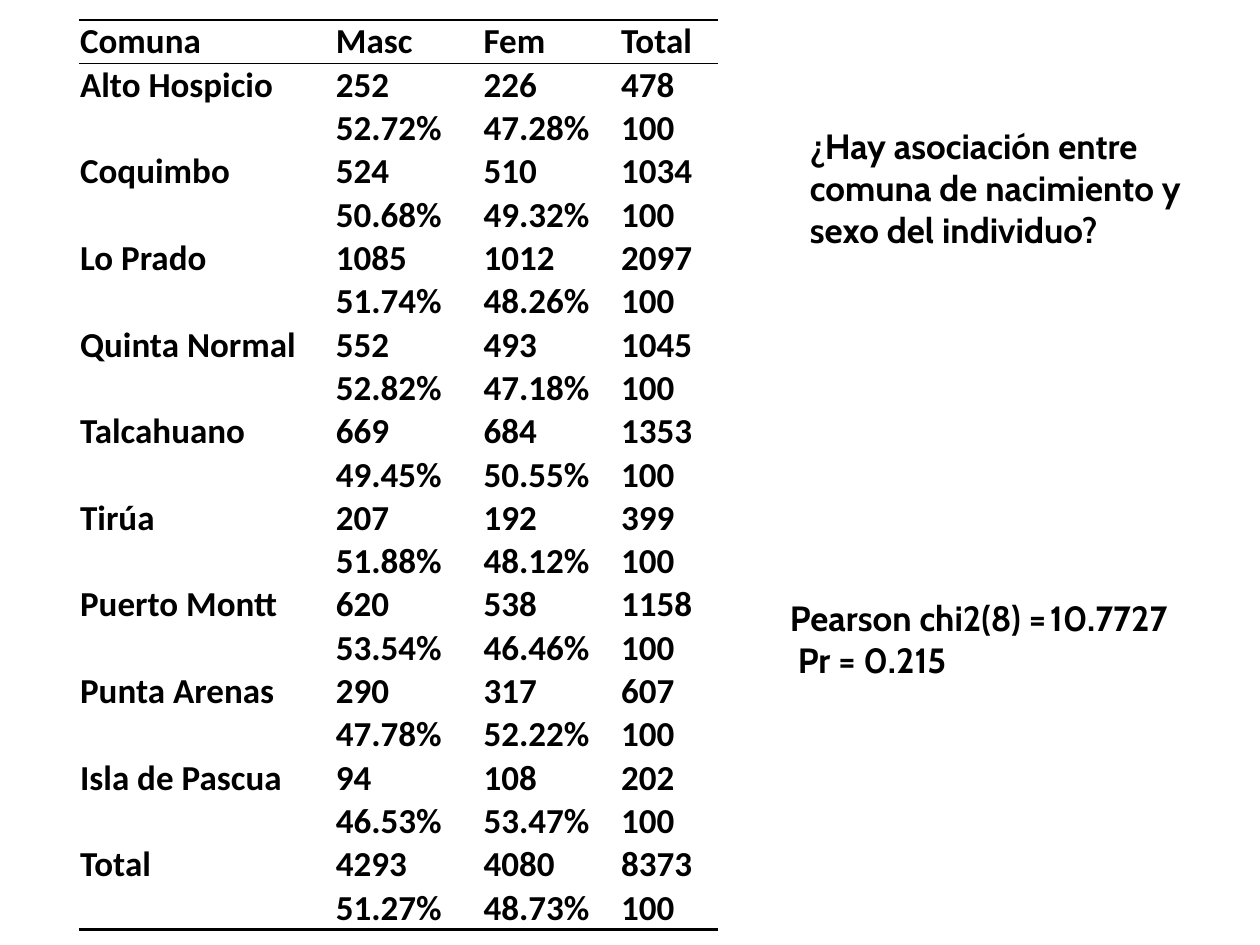
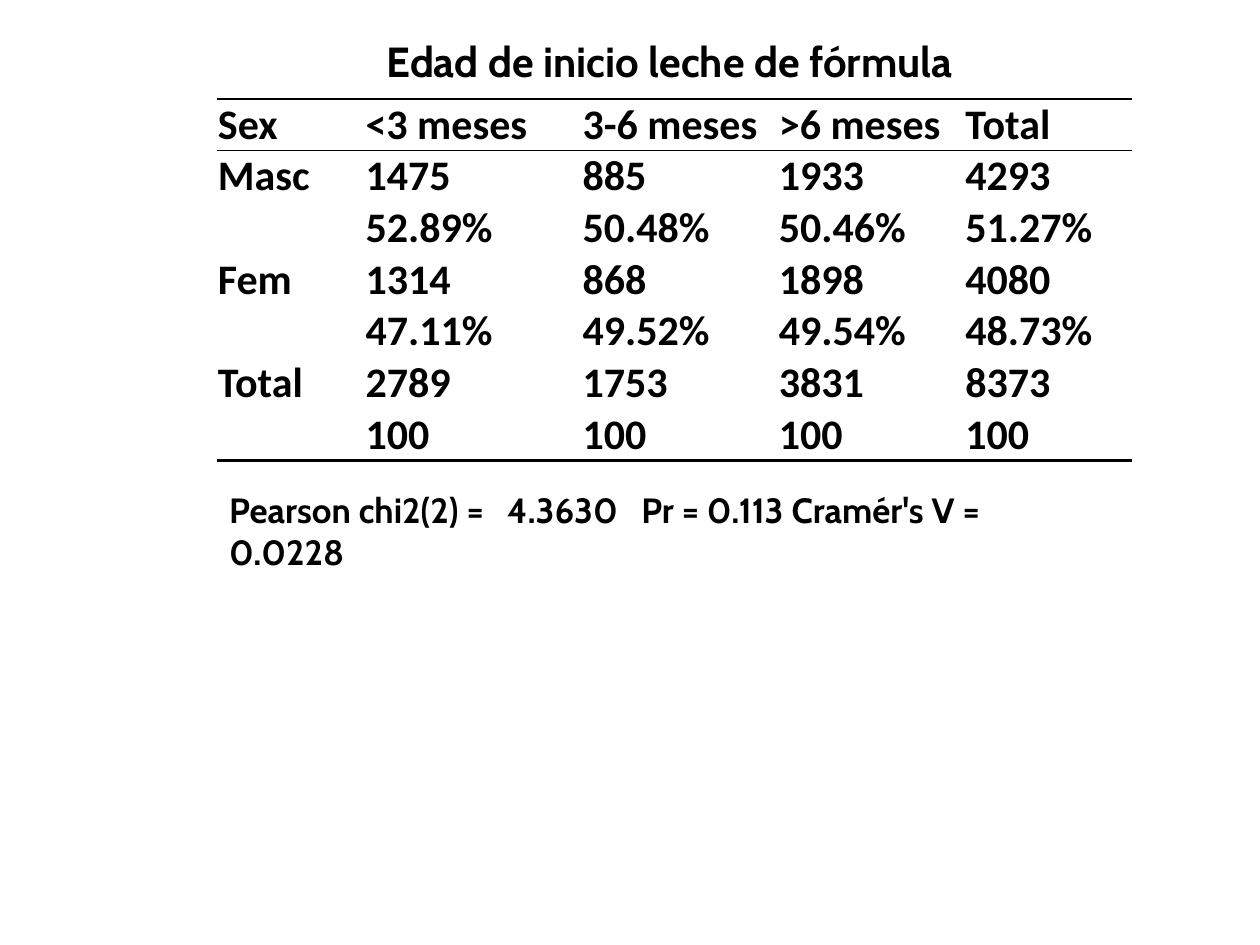
from dataclasses import dataclass

from lxml.etree import SubElement
from pptx import Presentation
from pptx.dml.color import RGBColor
from pptx.enum.text import MSO_ANCHOR, MSO_AUTO_SIZE, PP_ALIGN
from pptx.oxml import parse_xml
from pptx.oxml.ns import nsdecls, qn
from pptx.util import Pt

INK = "000000"
TABLE_FONT = "Calibri"
NOTE_FONT = "Cabin"
THICK_RULE = 1.5
THIN_RULE = 0.5
SIDE_INSET = 0.7
TOP_INSET = 0.25
NO_STYLE_NO_GRID = "{2D5ABB26-0587-4C30-8999-92F81FD0307C}"


@dataclass(frozen=True)
class Category:
    """One category of a cross table: a line of counts above a line of percentages."""
    name: str
    counts: tuple[str, ...]
    percentages: tuple[str, ...]


@dataclass(frozen=True)
class CrossTable:
    left: float
    top: float
    column_widths: tuple[float, ...]
    row_height: float
    font_size: float
    header: tuple[str, ...]
    categories: tuple[Category, ...]

    def rows(self) -> list[tuple[str, ...]]:
        rows = [self.header]
        for category in self.categories:
            rows += [(category.name, *category.counts), ("", *category.percentages)]
        return rows


@dataclass(frozen=True)
class Note:
    text: str
    left: float
    top: float
    width: float
    height: float
    size: float = 20
    align: PP_ALIGN = PP_ALIGN.LEFT
    hanging: float = 0
    tabs: tuple[float, ...] = ()


SEX_BY_COMUNA = CrossTable(
    left=45.1, top=11.5, column_widths=(146.2, 84.4, 78.6, 56.0), row_height=24.66,
    font_size=20, header=("Comuna", "Masc", "Fem", "Total"),
    categories=(
        Category("Alto Hospicio", ("252", "226", "478"), ("52.72%", "47.28%", "100")),
        Category("Coquimbo", ("524", "510", "1034"), ("50.68%", "49.32%", "100")),
        Category("Lo Prado", ("1085", "1012", "2097"), ("51.74%", "48.26%", "100")),
        Category("Quinta Normal", ("552", "493", "1045"), ("52.82%", "47.18%", "100")),
        Category("Talcahuano", ("669", "684", "1353"), ("49.45%", "50.55%", "100")),
        Category("Tirúa", ("207", "192", "399"), ("51.88%", "48.12%", "100")),
        Category("Puerto Montt", ("620", "538", "1158"), ("53.54%", "46.46%", "100")),
        Category("Punta Arenas", ("290", "317", "607"), ("47.78%", "52.22%", "100")),
        Category("Isla de Pascua", ("94", "108", "202"), ("46.53%", "53.47%", "100")),
        Category("Total", ("4293", "4080", "8373"), ("51.27%", "48.73%", "100")),
    ),
)
COMUNA_NOTES = (
    Note("¿Hay asociación entre comuna de nacimiento y sexo del individuo?",
         455.76, 67.7, 247.7, 80),
    Note("Pearson chi2(8) =\t10.7727 Pr = 0.215", 444.24, 337.5, 242, 55.4,
         hanging=4.6, tabs=(160.5,)),
)

FORMULA_BY_SEX = CrossTable(
    left=123.84, top=56.4, column_widths=(84.4, 124, 112.2, 106.6, 96), row_height=29.55,
    font_size=24, header=("Sex", "<3 meses", "3-6 meses", ">6 meses", "Total"),
    categories=(
        Category("Masc", ("1475", "885", "1933", "4293"),
                 ("52.89%", "50.48%", "50.46%", "51.27%")),
        Category("Fem", ("1314", "868", "1898", "4080"),
                 ("47.11%", "49.52%", "49.54%", "48.73%")),
        Category("Total", ("2789", "1753", "3831", "8373"), ("100",) * 4),
    ),
)
FORMULA_NOTES = (
    Note("Edad de inicio leche de fórmula", 191.5, 16.56, 382.3, 36,
         size=24, align=PP_ALIGN.CENTER),
    Note("Pearson chi2(2) =\t4.3630\tPr = 0.113 Cramér's V =\v0.0228",
         123.84, 275.8, 508.3, 55.4, tabs=(158.9, 235.6)),
)


def color(value: str) -> RGBColor:
    return RGBColor.from_string(value)


def write(paragraph, text: str, *, font: str, size: float, align=PP_ALIGN.LEFT,
          bold: bool = True, ink: str = INK) -> None:
    paragraph.text = text
    paragraph.alignment = align
    paragraph.font.name = font
    paragraph.font.size = Pt(size)
    paragraph.font.bold = bold
    paragraph.font.color.rgb = color(ink)


def add_rules(cell, rules: dict[str, float]) -> None:
    """Draw cell borders; rules maps lnT and lnB, in that order, to widths in points."""
    properties = cell._tc.get_or_add_tcPr()
    for index, (side, width) in enumerate(rules.items()):
        properties.insert(index, parse_xml(
            f'<a:{side} {nsdecls("a")} w="{Pt(width)}"><a:solidFill>'
            f'<a:srgbClr val="{INK}"/></a:solidFill></a:{side}>'))


def rules_for_row(index: int, last: int) -> dict[str, float]:
    if index == 0:
        return {"lnT": THICK_RULE, "lnB": THIN_RULE}
    return {"lnB": THICK_RULE} if index == last else {}


def add_cross_table(slide, cross_table: CrossTable) -> None:
    rows = cross_table.rows()
    table = slide.shapes.add_table(
        len(rows), len(cross_table.header), Pt(cross_table.left), Pt(cross_table.top),
        Pt(sum(cross_table.column_widths)), Pt(cross_table.row_height * len(rows))).table
    table.first_row = table.horz_banding = False
    table._tbl.tblPr.find(qn("a:tableStyleId")).text = NO_STYLE_NO_GRID
    for column, width in zip(table.columns, cross_table.column_widths):
        column.width = Pt(width)
    for row_index, values in enumerate(rows):
        table.rows[row_index].height = Pt(cross_table.row_height)
        for column_index, value in enumerate(values):
            cell = table.cell(row_index, column_index)
            cell.margin_left = cell.margin_right = Pt(SIDE_INSET)
            cell.margin_top = Pt(TOP_INSET)
            cell.margin_bottom = Pt(0)
            cell.vertical_anchor = MSO_ANCHOR.BOTTOM
            cell.fill.background()
            add_rules(cell, rules_for_row(row_index, len(rows) - 1))
            write(cell.text_frame.paragraphs[0], value,
                  font=TABLE_FONT, size=cross_table.font_size)


def add_note(slide, note: Note) -> None:
    frame = slide.shapes.add_textbox(
        Pt(note.left), Pt(note.top), Pt(note.width), Pt(note.height)).text_frame
    frame.word_wrap = True
    frame.auto_size = MSO_AUTO_SIZE.SHAPE_TO_FIT_TEXT
    paragraph = frame.paragraphs[0]
    properties = paragraph._p.get_or_add_pPr()
    if note.hanging:
        properties.set("marL", str(Pt(note.hanging)))
        properties.set("indent", str(-Pt(note.hanging)))
    if note.tabs:
        tab_list = SubElement(properties, qn("a:tabLst"))
        for position in note.tabs:
            SubElement(tab_list, qn("a:tab"), pos=str(Pt(position)), algn="l")
    write(paragraph, note.text, font=NOTE_FONT, size=note.size, align=note.align)


def main() -> None:
    presentation = Presentation()
    presentation.slide_width, presentation.slide_height = Pt(720), Pt(540)
    blank_layout = presentation.slide_layouts[6]
    for cross_table, notes in ((SEX_BY_COMUNA, COMUNA_NOTES), (FORMULA_BY_SEX, FORMULA_NOTES)):
        slide = presentation.slides.add_slide(blank_layout)
        add_cross_table(slide, cross_table)
        for note in notes:
            add_note(slide, note)
    presentation.save("out.pptx")


if __name__ == "__main__":
    main()
